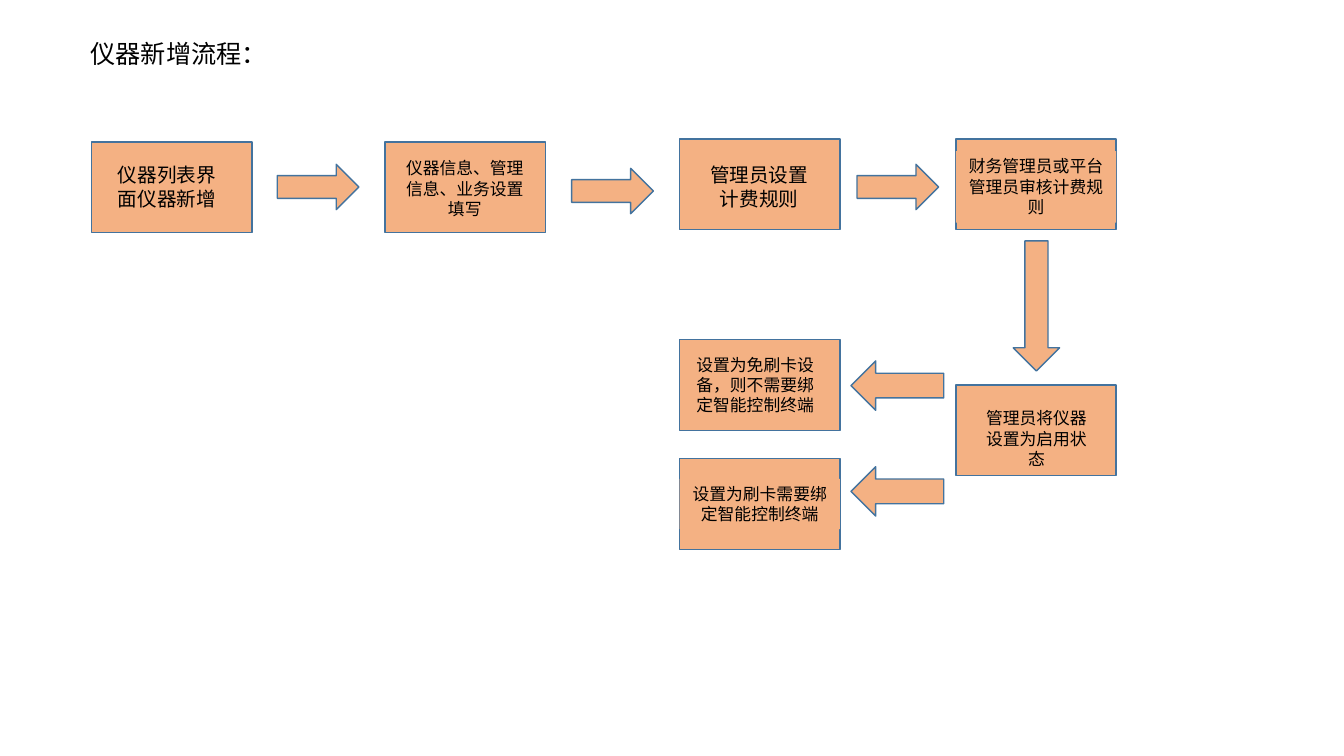
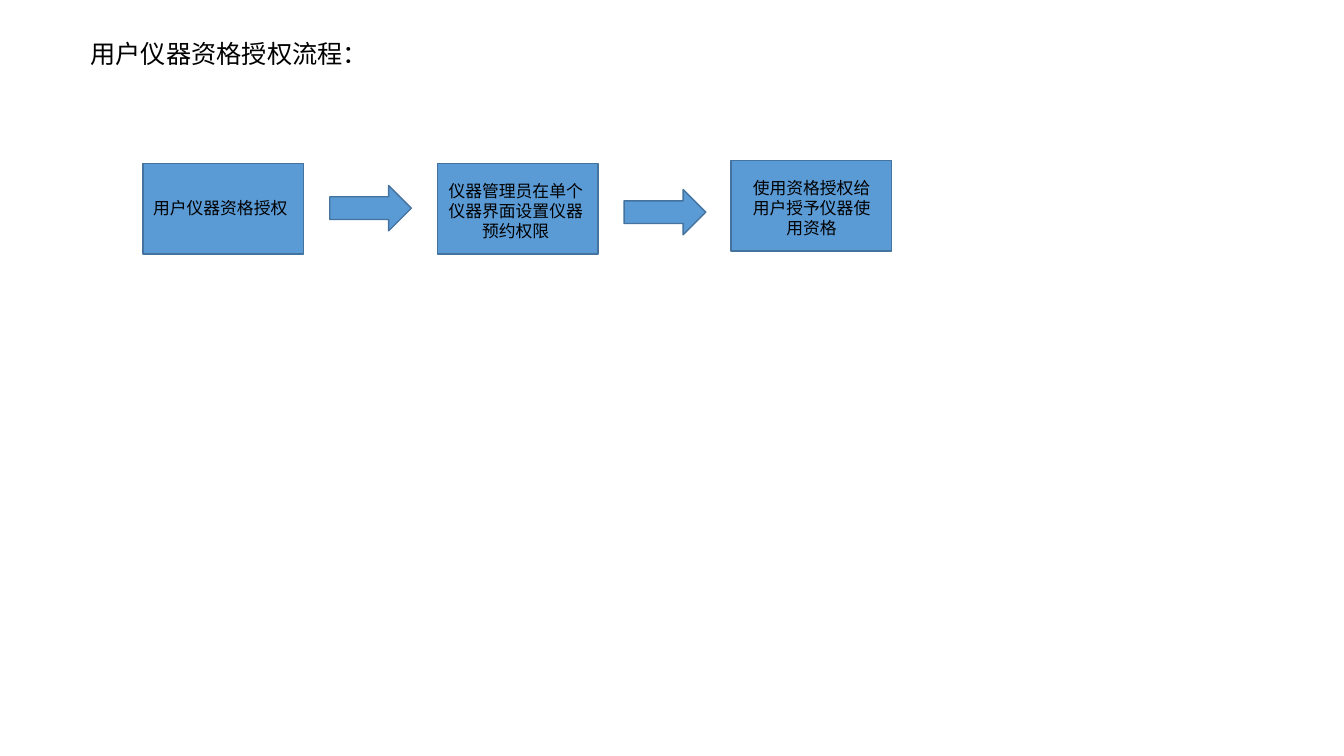
import dataclasses
import typing

import lxml.etree
import pptx
import pptx.dml.color
import pptx.enum.shapes
import pptx.enum.text
import pptx.oxml.ns
import pptx.util

EMU_PER_PX = 9144
SLIDE_W, SLIDE_H = 1333, 750
STEP_W, STEP_H = 159, 90
LATIN_FONT = "Calibri"
CJK_FONT = "Noto Sans CJK SC"
COLORS = {
    "orange": "F4B183",
    "blue": "5B9BD5",
    "outline": "43739E",
    "text": "000000",
}

SHAPE = pptx.enum.shapes.MSO_SHAPE
ALIGN = pptx.enum.text.PP_ALIGN
ARROW_SIZES = {
    SHAPE.RIGHT_ARROW: (81, 45),
    SHAPE.LEFT_ARROW: (92, 49),
    SHAPE.DOWN_ARROW: (46, 129),
}


class Rect(typing.NamedTuple):
    x: int
    y: int
    w: int
    h: int


TITLE_RECT = Rect(80, 33, 1145, 71)


@dataclasses.dataclass(frozen=True)
class Step:
    x: int
    y: int
    text: str
    label: Rect
    size: int = 12
    align: ALIGN = ALIGN.CENTER


@dataclasses.dataclass(frozen=True)
class Arrow:
    x: int
    y: int
    kind: SHAPE = SHAPE.RIGHT_ARROW


@dataclasses.dataclass(frozen=True)
class Flow:
    title: str
    color: str
    filled_labels: bool
    steps: list[Step]
    arrows: list[Arrow]


FLOWS = [
    Flow(
        "仪器新增流程：", "orange", True,
        [
            Step(91, 141, "仪器列表界面仪器新增", Rect(107, 157, 126, 57), 14, ALIGN.LEFT),
            Step(382, 141, "仪器信息、管理信息、业务设置填写", Rect(392, 152, 138, 71)),
            Step(674, 138, "管理员设置计费规则", Rect(688, 157, 130, 57), 14),
            Step(948, 138, "财务管理员或平台管理员审核计费规则", Rect(948, 150, 159, 71)),
            Step(948, 382, "管理员将仪器设置为启用状态", Rect(960, 400, 136, 71)),
            Step(674, 337, "设置为免刷卡设备，则不需要绑定智能控制终端", Rect(680, 347, 138, 71)),
            Step(674, 455, "设置为刷卡需要绑定智能控制终端", Rect(674, 475, 159, 50)),
        ],
        [
            Arrow(275, 163),
            Arrow(567, 167),
            Arrow(850, 163),
            Arrow(1005, 239, SHAPE.DOWN_ARROW),
            Arrow(844, 358, SHAPE.LEFT_ARROW),
            Arrow(844, 463, SHAPE.LEFT_ARROW),
        ],
    ),
    Flow(
        "用户仪器资格授权流程：", "blue", False,
        [
            Step(142, 162, "用户仪器资格授权", Rect(142, 191, 154, 30), align=ALIGN.LEFT),
            Step(434, 162, "仪器管理员在单个仪器界面设置仪器预约权限", Rect(429, 174, 165, 71)),
            Step(725, 159, "使用资格授权给用户授予仪器使用资格", Rect(733, 171, 144, 71)),
        ],
        [Arrow(327, 184), Arrow(619, 188)],
    ),
]


def px(n: int) -> pptx.util.Emu:
    return pptx.util.Emu(n * EMU_PER_PX)


def rgb(name: str) -> pptx.dml.color.RGBColor:
    return pptx.dml.color.RGBColor.from_string(COLORS[name])


def add_text(s, rect: Rect, text: str, size: int, font: str,
             align: ALIGN = ALIGN.LEFT, fill: str | None = None) -> None:
    sp = s.shapes.add_textbox(*map(px, rect))
    if fill:
        sp.fill.solid()
        sp.fill.fore_color.rgb = rgb(fill)
    tf = sp.text_frame
    tf.word_wrap = True
    tf.auto_size = pptx.enum.text.MSO_AUTO_SIZE.SHAPE_TO_FIT_TEXT
    p = tf.paragraphs[0]
    p.text = text
    p.alignment = align
    p.font.size = pptx.util.Pt(size)
    p.font.name = font
    p.font.color.rgb = rgb("text")
    qn = pptx.oxml.ns.qn
    props = p._p.get_or_add_pPr().find(qn("a:defRPr"))
    lxml.etree.SubElement(props, qn("a:ea"), typeface=CJK_FONT)


def add_block(s, kind: SHAPE, rect: Rect, fill: str) -> None:
    sp = s.shapes.add_shape(kind, *map(px, rect))
    sp.shadow.inherit = False
    sp.fill.solid()
    sp.fill.fore_color.rgb = rgb(fill)
    sp.line.color.rgb = rgb("outline")
    sp.line.width = pptx.util.Pt(1)


def add_flow(prs, flow: Flow) -> None:
    s = prs.slides.add_slide(prs.slide_layouts[6])
    add_text(s, TITLE_RECT, flow.title, 18, LATIN_FONT)
    label_fill = flow.color if flow.filled_labels else None
    for step in flow.steps:
        add_block(s, SHAPE.RECTANGLE, Rect(step.x, step.y, STEP_W, STEP_H), flow.color)
        add_text(s, step.label, step.text, step.size, CJK_FONT, step.align, label_fill)
    for arrow in flow.arrows:
        add_block(s, arrow.kind, Rect(arrow.x, arrow.y, *ARROW_SIZES[arrow.kind]), flow.color)


def main() -> None:
    prs = pptx.Presentation()
    prs.slide_width, prs.slide_height = px(SLIDE_W), px(SLIDE_H)
    for flow in FLOWS:
        add_flow(prs, flow)
    prs.save("out.pptx")


if __name__ == "__main__":
    main()
